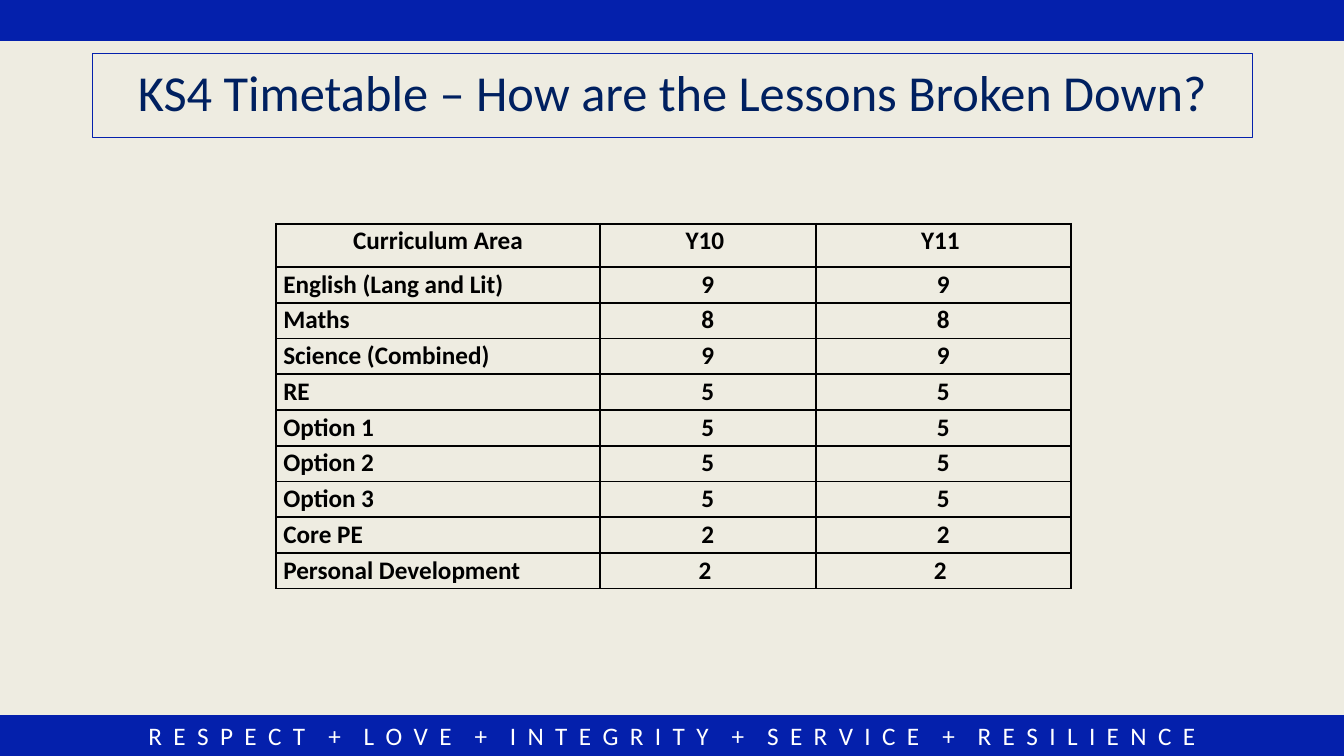
from lxml import etree
from pptx import Presentation
from pptx import util as u
from pptx.dml.color import RGBColor
from pptx.enum import shapes, text
from pptx.oxml.ns import qn

BLUE = RGBColor(0x04, 0x20, 0xAC)
NAVY = RGBColor(0x00, 0x20, 0x60)
CREAM = RGBColor(0xEE, 0xEC, 0xE1)
WHITE = RGBColor(0xFF, 0xFF, 0xFF)
BLACK = RGBColor(0x00, 0x00, 0x00)

WIDE, HIGH, BAR = 13.33, 7.5, 0.4
MID = text.PP_ALIGN.CENTER
TITLE = "KS4 Timetable – How are the Lessons Broken Down?"
VALUES = ["RESPECT", "LOVE", "INTEGRITY", "SERVICE", "RESILIENCE"]
COLS = [3.21, 2.14, 2.53]
HEAD = 0.43
LESSONS = [
    ("Curriculum Area", "Y10 ", "Y11 "),
    ("English (Lang and Lit)", "9", "9"),
    ("Maths", "8", "8"),
    ("Science (Combined)", "9", "9"),
    ("RE", "5", "5"),
    ("Option 1", "5", "5"),
    ("Option 2", "5", "5"),
    ("Option 3", "5", "5"),
    ("Core PE", "2", "2"),
    ("Personal Development", "2 ", "2 "),
]


def style(item, **form):
    for key, value in form.items():
        setattr(item, key, value)


def add_run(para, words, size, color, bold=False):
    run = para.add_run()
    run.text = words
    style(run.font, name="Calibri", size=u.Pt(size), bold=bold)
    run.font.color.rgb = color
    return run


def add_bar(slide, box):
    bar = slide.shapes.add_shape(shapes.MSO_SHAPE.RECTANGLE, *map(u.Inches, box))
    bar.shadow.inherit = False
    bar.fill.solid()
    bar.fill.fore_color.rgb = BLUE
    bar.line.color.rgb = BLUE
    bar.line.width = u.Pt(1)
    return bar


def add_motto(slide, box):
    frame = add_bar(slide, box).text_frame
    style(frame, word_wrap=True, vertical_anchor=text.MSO_ANCHOR.MIDDLE)
    para = frame.paragraphs[0]
    para.alignment = MID
    # Letter spacing, in hundredths of a point, sets the wide gaps
    for i, value in enumerate(VALUES):
        parts = [(" ", 1017), ("+ ", 610)] if i else []
        for words, gap in parts + [(" ".join(value), 203)]:
            run = add_run(para, words, 18, WHITE)
            run._r.get_or_add_rPr().set("spc", str(gap))


def add_title(slide, box):
    title = slide.shapes.title
    sides = ("left", "top", "width", "height")
    style(title, **dict(zip(sides, map(u.Inches, box))))
    title.line.color.rgb = BLUE
    title.line.width = u.Pt(0.75)
    frame = title.text_frame
    style(frame, word_wrap=True, auto_size=text.MSO_AUTO_SIZE.NONE,
          vertical_anchor=text.MSO_ANCHOR.MIDDLE)
    para = frame.paragraphs[0]
    style(para, alignment=MID, line_spacing=0.9)
    add_run(para, TITLE, 36, NAVY)


def add_edges(cell):
    props = cell._tc.get_or_add_tcPr()
    for side in ("lnL", "lnR", "lnT", "lnB"):
        edge = etree.SubElement(props, qn("a:" + side), w=str(u.Pt(1.5)))
        fill = etree.SubElement(edge, qn("a:solidFill"))
        etree.SubElement(fill, qn("a:srgbClr"), val=str(BLACK))


def add_lessons(slide, box):
    table = slide.shapes.add_table(
        len(LESSONS), len(COLS), *map(u.Inches, box)).table
    style(table, first_row=False, horz_banding=False)
    for col, width in zip(table.columns, COLS):
        col.width = u.Inches(width)
    step = (box[3] - HEAD) / (len(LESSONS) - 1)
    for r, row in enumerate(LESSONS):
        table.rows[r].height = u.Inches(step if r else HEAD)
        for c, words in enumerate(row):
            cell = table.cell(r, c)
            style(cell, margin_left=u.Inches(0.07), margin_top=0,
                  margin_right=u.Inches(0.07), margin_bottom=0)
            add_edges(cell)
            cell.fill.background()
            para = cell.text_frame.paragraphs[0]
            left = r > 0 and c == 0
            style(para, line_spacing=1.07,
                  alignment=text.PP_ALIGN.LEFT if left else MID)
            add_run(para, words, 18, BLACK, True)


def main():
    deck = Presentation()
    style(deck, slide_width=u.Inches(WIDE), slide_height=u.Inches(HIGH))
    slide = deck.slides.add_slide(deck.slide_layouts[5])
    slide.background.fill.solid()
    slide.background.fill.fore_color.rgb = CREAM

    # Bars at foot and head
    add_motto(slide, (0, HIGH - BAR, WIDE, BAR))
    add_bar(slide, (0, 0, WIDE, BAR))
    # Title and timetable
    add_title(slide, (0.92, 0.53, 11.5, 0.83))
    add_lessons(slide, (2.74, 2.22, sum(COLS), 3.62))
    deck.save("out.pptx")


if __name__ == "__main__":
    main()
